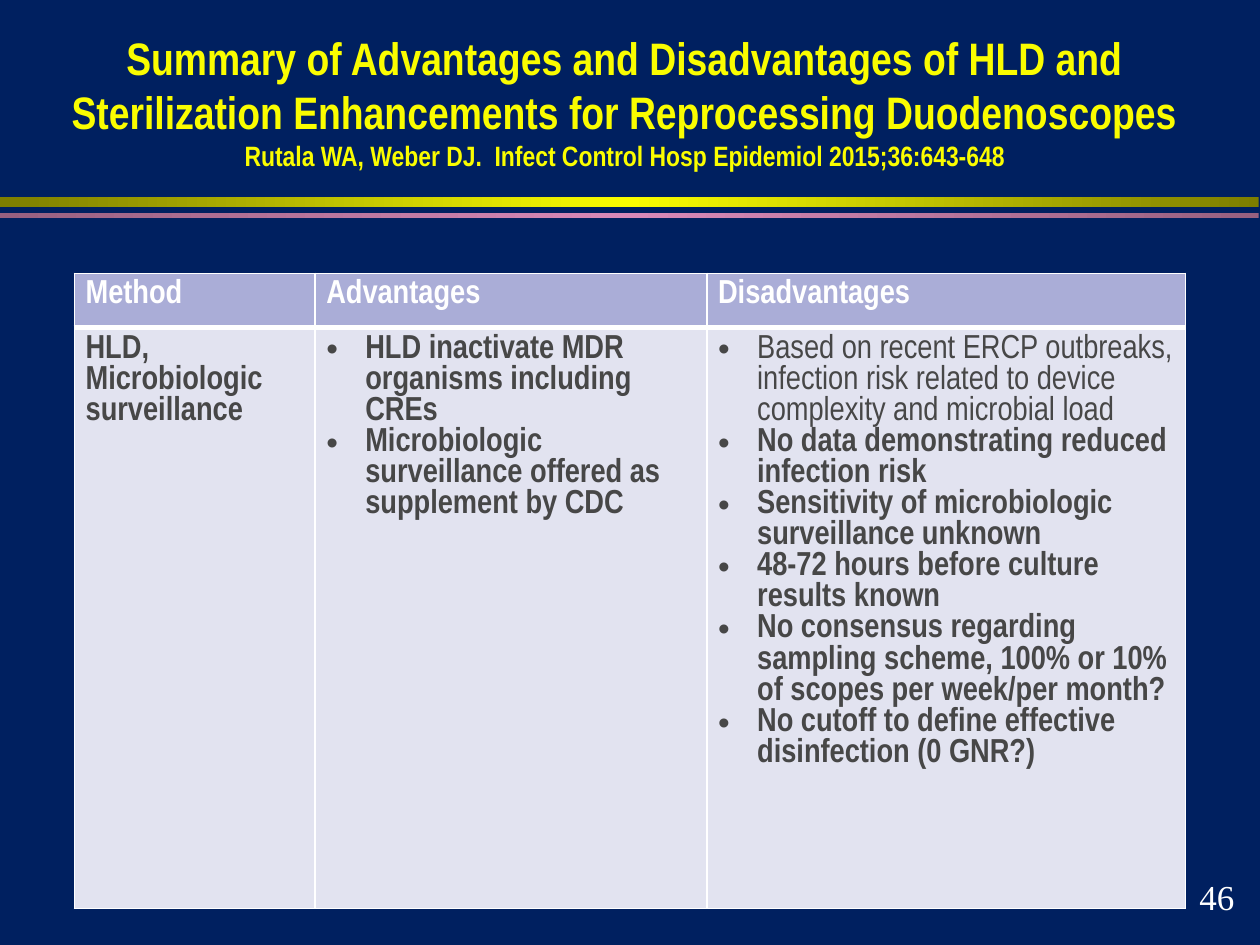
import copy
import pptx
import pptx.util
import pptx.dml.color
import pptx.enum.shapes
import pptx.enum.text
import pptx.oxml
import pptx.oxml.ns
import lxml.etree

Inches = pptx.util.Inches
Pt = pptx.util.Pt
qn = pptx.oxml.ns.qn

COLORS = {
    "navy": "002060",
    "yellow": "FAFD00",
    "olive": "7D7E00",
    "pink": "D989B8",
    "mauve": "976080",
    "header": "AAADD7",
    "body": "E2E3F0",
    "ink": "474747",
    "white": "FFFFFF",
}


def rgb(name):
    return pptx.dml.color.RGBColor.from_string(COLORS[name])


def add_span(para, text, size=19, font="Arial Narrow", color="ink", bold=True):
    span = para.add_run()
    span.text = text
    span.font.size = Pt(size)
    span.font.name = font
    span.font.bold = bold
    span.font.color.rgb = rgb(color)


deck = pptx.Presentation()
deck.slide_width = Inches(10)
deck.slide_height = Inches(7.5)
page = deck.slides.add_slide(deck.slide_layouts[5])
page.background.fill.solid()
page.background.fill.fore_color.rgb = rgb("navy")

for top, height, edge, middle in [(1.56, 0.08, "olive", "yellow"), (1.69, 0.04, "mauve", "pink")]:
    stripe = page.shapes.add_shape(
        pptx.enum.shapes.MSO_SHAPE.RECTANGLE, 0, Inches(top), Inches(9.99), Inches(height))
    stripe.shadow.inherit = False
    stripe.line.fill.background()
    stripe.fill.gradient()
    stripe.fill.gradient_angle = 0
    stop_list = stripe.element.spPr.find(qn("a:gradFill")).find(qn("a:gsLst"))
    stop_list.append(copy.deepcopy(stop_list[0]))
    for stop, position, color in zip(stripe.fill.gradient_stops, (0, 0.5, 1), (edge, middle, edge)):
        stop.position = position
        stop.color.rgb = rgb(color)

title = page.shapes.title
title.left, title.top, title.width, title.height = map(Inches, (0.44, 0.17, 9.04, 1.25))
title.text_frame.word_wrap = True
title.text_frame.auto_size = pptx.enum.text.MSO_AUTO_SIZE.NONE
title.text_frame.vertical_anchor = pptx.enum.text.MSO_ANCHOR.BOTTOM
para = title.text_frame.paragraphs[0]
para.alignment = pptx.enum.text.PP_ALIGN.CENTER
add_span(para, "Summary of Advantages and Disadvantages of HLD and "
         "Sterilization Enhancements for Reprocessing Duodenoscopes", size=26, color="yellow")
para.add_line_break()
add_span(para, "Rutala WA, Weber DJ.  Infect Control Hosp Epidemiol 2015;36:643-648", size=16, color="yellow")

rows = [
    [["Method"], ["Advantages"], ["Disadvantages"]],
    [
        ["HLD, Microbiologic surveillance"],
        [
            "HLD inactivate MDR organisms including CREs",
            "Microbiologic surveillance offered as supplement by CDC",
        ],
        [
            "Based on recent ERCP outbreaks, infection risk related to device complexity and microbial load",
            "No data demonstrating reduced infection risk",
            "Sensitivity of microbiologic surveillance unknown",
            "48-72 hours before culture results known",
            "No consensus regarding sampling scheme, 100% or 10% of scopes per week/per month?",
            "No cutoff to define effective disinfection (0 GNR?)",
        ],
    ],
]
widths = [1.91, 3.11, 3.8]
heights = [0.43, 4.61]
table = page.shapes.add_table(
    len(rows), len(widths), Inches(0.59), Inches(2.17), Inches(sum(widths)), Inches(sum(heights))).table
for column, width in zip(table.columns, widths):
    column.width = Inches(width)
for row, height in zip(table.rows, heights):
    row.height = Inches(height)

for row_index, row in enumerate(rows):
    is_header = row_index == 0
    borders = {"L": 1, "R": 1, "T": 1 if is_header else 3, "B": 3 if is_header else 1}
    for column_index, items in enumerate(row):
        cell = table.cell(row_index, column_index)
        cell.margin_left = cell.margin_right = Inches(0.09)
        cell.margin_top = cell.margin_bottom = Inches(0.05)
        for side, weight in borders.items():
            border = lxml.etree.SubElement(cell._tc.get_or_add_tcPr(), qn("a:ln" + side), w=str(Pt(weight)))
            paint = lxml.etree.SubElement(border, qn("a:solidFill"))
            lxml.etree.SubElement(paint, qn("a:srgbClr"), val=COLORS["white"])
        cell.fill.solid()
        cell.fill.fore_color.rgb = rgb("header" if is_header else "body")
        for item_index, item in enumerate(items):
            para = cell.text_frame.paragraphs[0] if item_index == 0 else cell.text_frame.add_paragraph()
            if len(items) > 1:
                settings = para._p.get_or_add_pPr()
                settings.set("marL", str(Inches(0.31)))
                settings.set("indent", str(-Inches(0.31)))
                lxml.etree.SubElement(settings, qn("a:buFont"), typeface="Arial")
                lxml.etree.SubElement(settings, qn("a:buChar"), char="•")
            add_span(para, item, color="white" if is_header else "ink",
                     bold=not item.startswith("Based on"))

number = page.shapes.add_textbox(Inches(9.42), Inches(6.9), Inches(0.48), Inches(0.44))
number.text_frame.word_wrap = False
number.text_frame.auto_size = pptx.enum.text.MSO_AUTO_SIZE.SHAPE_TO_FIT_TEXT
add_span(number.text_frame.paragraphs[0], "46", size=20, font="Times New Roman", color="white", bold=False)

deck.save("out.pptx")
